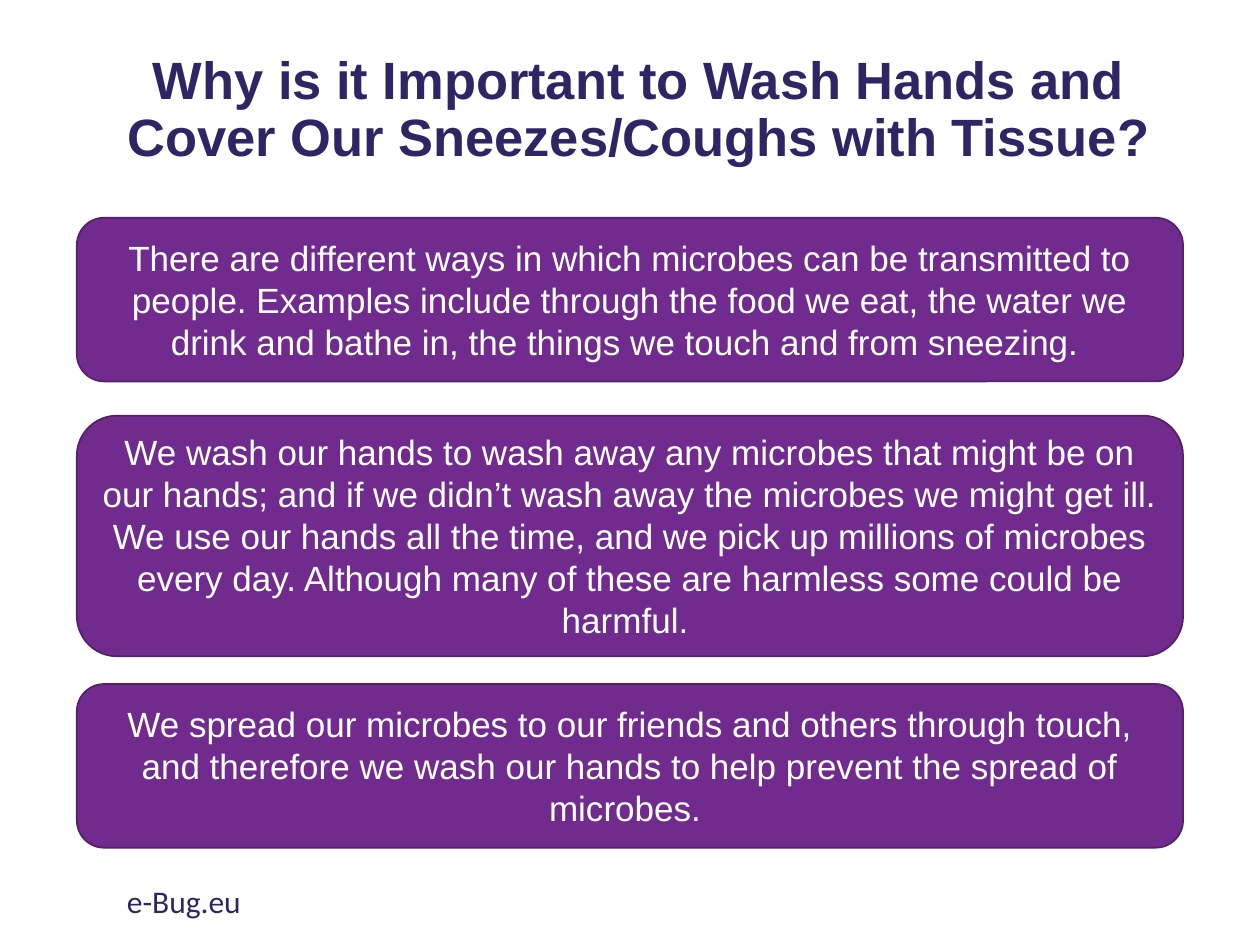
from pptx import Presentation
from pptx import util as u
from pptx.dml import color
from pptx.enum import shapes, text

COLOURS = {"ink": "302564", "panel": "712B8F", "edge": "54206A", "white": "FFFFFF"}

# Top and height in cm, then wording
PANELS = [
    (4.39, 3.3, "There are different ways in which microbes can be transmitted to people. "
     "Examples include through the food we eat, the water we drink and bathe in, "
     "the things we touch and from sneezing. "),
    (8.38, 4.85, "We wash our hands to wash away any microbes that might be on our hands; "
     "and if we didn’t wash away the microbes we might get ill. We use our hands all "
     "the time, and we pick up millions of microbes every day. Although many of these "
     "are harmless some could be harmful. "),
    (13.79, 3.3, "We spread our microbes to our friends and others through touch, and "
     "therefore we wash our hands to help prevent the spread of microbes. "),
]


class SlideBuilder:
    """Holds the slide and the shared style."""

    def __init__(self, page):
        self.page = page

    def colour(self, name):
        return color.RGBColor.from_string(COLOURS[name])

    def set_text(self, box, wording, size, ink, font="Arial", bold=False,
                 align=text.PP_ALIGN.CENTER, anchor=text.MSO_ANCHOR.MIDDLE):
        frame = box.text_frame
        frame.word_wrap = True
        frame.vertical_anchor = anchor
        para = frame.paragraphs[0]
        para.text = wording
        para.alignment = align
        para.font.name = font
        para.font.size = u.Pt(size)
        para.font.bold = bold
        para.font.color.rgb = self.colour(ink)
        return para

    def label(self, left, top, width, height, wording, size, **style):
        box = self.page.shapes.add_textbox(*map(u.Cm, (left, top, width, height)))
        return self.set_text(box, wording, size, "ink", **style)

    def panel(self, top, height, wording):
        box = self.page.shapes.add_shape(
            shapes.MSO_SHAPE.ROUNDED_RECTANGLE,
            *map(u.Cm, (1.55, top, 22.3, height)))
        box.shadow.inherit = False
        box.fill.solid()
        box.fill.fore_color.rgb = self.colour("panel")
        box.line.color.rgb = self.colour("edge")
        box.line.width = u.Pt(1)
        self.set_text(box, wording, 20, "white")


def main():
    deck = Presentation()
    deck.slide_width, deck.slide_height = u.Cm(25.4), u.Cm(19.05)
    builder = SlideBuilder(deck.slides.add_slide(deck.slide_layouts[6]))

    # Title
    title = builder.label(
        1.93, 1.09, 21.9, 2.31,
        "Why is it Important to Wash Hands and Cover Our Sneezes/Coughs with Tissue?",
        30, bold=True)
    title.line_spacing = 0.9

    # Explanations
    for top, height, wording in PANELS:
        builder.panel(top, height, wording)

    # Footer address
    builder.label(2.31, 17.65, 8.59, 1.02, "e-Bug.eu", 18, font="Calibri",
                  align=text.PP_ALIGN.LEFT, anchor=text.MSO_ANCHOR.TOP)

    deck.save("out.pptx")


if __name__ == "__main__":
    main()
